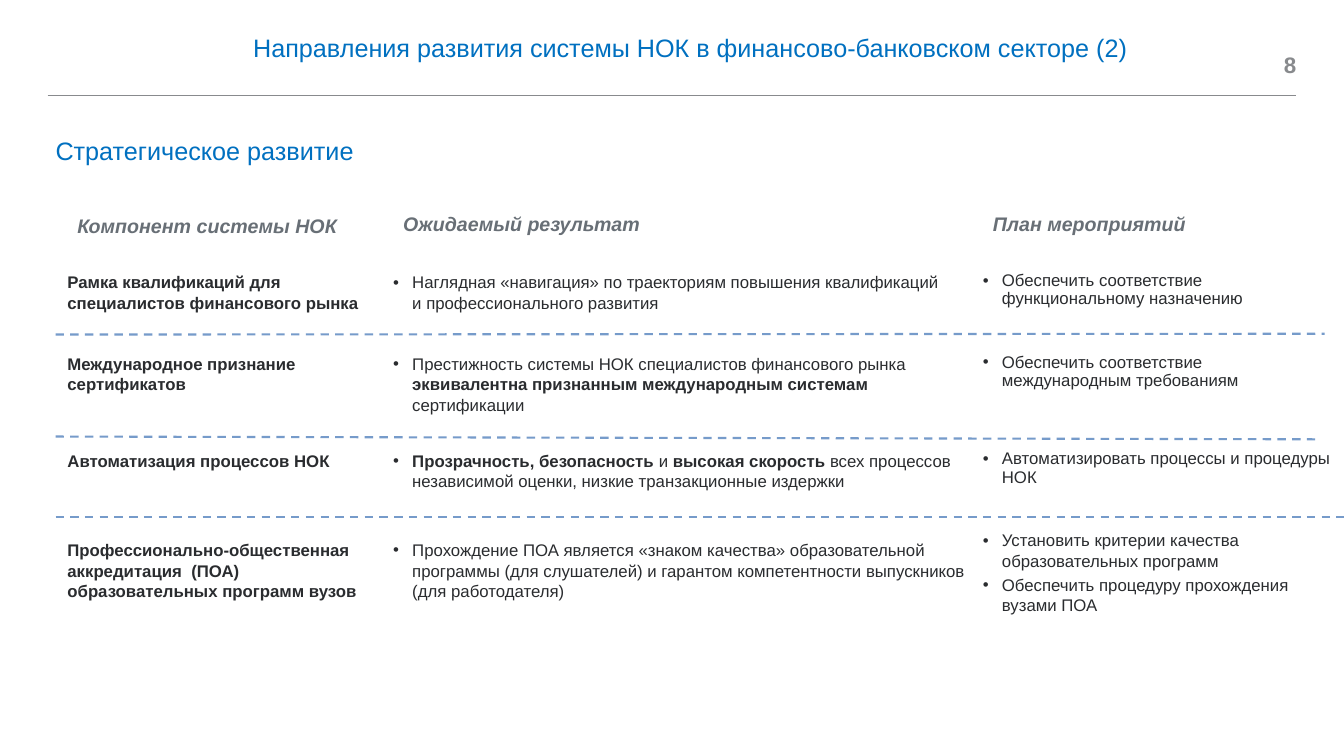
from lxml import etree
from pptx import Presentation
from pptx.dml.color import RGBColor
from pptx.enum.dml import MSO_LINE
from pptx.enum.shapes import MSO_CONNECTOR
from pptx.enum.text import MSO_ANCHOR, MSO_AUTO_SIZE, PP_ALIGN
from pptx.oxml.ns import qn
from pptx.util import Cm, Pt

STRAIGHT = MSO_CONNECTOR.STRAIGHT
DASH = MSO_LINE.DASH
TOP, MIDDLE = MSO_ANCHOR.TOP, MSO_ANCHOR.MIDDLE
FIXED = MSO_AUTO_SIZE.NONE
LEFT, RIGHT = PP_ALIGN.LEFT, PP_ALIGN.RIGHT

COLORS = {"blue": "0070C0", "dark": "2A2C2F", "head": "686F76",
          "gray": "888A8D", "dash": "769BCA"}

TITLE = "Направления развития системы НОК в финансово-банковском секторе (2)"
SUBTITLE = "Стратегическое развитие"
PAGE = "8"

# Heading, left, top, width
HEADS = [
    ("Компонент системы НОК", 1.7, 5.26, 10.59),
    ("Ожидаемый результат", 9.91, 5.21, 10.59),
    ("План мероприятий", 24.77, 5.21, 5.61),
]
# Top, component, result, width of result, plan; *...* marks bold
ROWS = [
    (6.86, "Рамка квалификаций для специалистов финансового рынка",
     "Наглядная «навигация» по траекториям повышения квалификаций "
     "и профессионального развития", 14.05,
     ["Обеспечить соответствие функциональному назначению"]),
    (8.92, "Международное признание сертификатов",
     "Престижность системы НОК специалистов финансового рынка "
     "*эквивалентна признанным международным системам *сертификации", 14.53,
     ["Обеспечить соответствие международным требованиям"]),
    (11.35, "Автоматизация процессов НОК",
     "*Прозрачность, безопасность* и *высокая скорость *всех процессов "
     "независимой оценки, низкие транзакционные издержки", 14.53,
     ["Автоматизировать процессы и процедуры НОК"]),
    (13.61, "Профессионально-общественная аккредитация  (ПОА) "
     "образовательных программ вузов",
     "Прохождение ПОА является «знаком качества» образовательной программы "
     "(для слушателей) и гарантом компетентности выпускников "
     "(для работодателя)", 14.53,
     ["Установить критерии качества образовательных программ",
      "Обеспечить процедуру прохождения вузами ПОА"]),
]
# Left, top, right, bottom, colour, weight, dashed
RULES = [
    (1.2, 2.41, 32.66, 2.41, "gray", 0.5, False),
    (1.4, 8.43, 33.38, 8.41, "dash", 1.5, True),
    (1.4, 11.0, 33.2, 11.07, "dash", 1.5, True),
    (1.4, 13.03, 33.86, 13.03, "dash", 1.5, True),
]
COLS = [left for _, left, _, _ in HEADS]
NAME_W, PLAN_W, ROW_H = 7.92, 8.79, 1.63

deck = Presentation()
deck.slide_width, deck.slide_height = Cm(33.87), Cm(19.05)
slide = deck.slides.add_slide(deck.slide_layouts[1])
title, body = slide.placeholders


def bullet(para):
    props = para._p.get_or_add_pPr()
    props.set("marL", str(Cm(0.48)))
    props.set("indent", str(-Cm(0.48)))
    etree.SubElement(props, qn("a:buFont")).set("typeface", "Arial")
    etree.SubElement(props, qn("a:buChar")).set("char", "•")


def write(place, lines, size, color, bold=False, italic=False, shape=None,
          list_=False, space=1.0, align=LEFT, inset=(0, 0), anchor=TOP):
    """Fill the given placeholder, or a new text box, at place."""
    spot = [Cm(part) for part in place]
    if shape is None:
        shape = slide.shapes.add_textbox(*spot)
    else:
        shape.left, shape.top, shape.width, shape.height = spot
    frame = shape.text_frame
    frame.word_wrap, frame.auto_size = True, FIXED
    frame.vertical_anchor = anchor
    frame.margin_left = frame.margin_right = Cm(inset[0])
    frame.margin_top = frame.margin_bottom = Cm(inset[1])
    for i, line in enumerate(lines):
        para = frame.add_paragraph() if i else frame.paragraphs[0]
        para.alignment, para.line_spacing = align, space
        para.space_before = Pt(3 if i else 0)
        if list_:
            bullet(para)
        for j, part in enumerate(line.split("*")):
            if not part:
                continue
            run = para.add_run()
            run.text = part
            font = run.font
            font.name, font.size = "Arial", Pt(size)
            font.bold, font.italic = bold or j % 2 == 1, italic
            font.color.rgb = RGBColor.from_string(COLORS[color])


def rule(left, top, right, bottom, color, weight, dashed):
    line = slide.shapes.add_connector(
        STRAIGHT, Cm(left), Cm(top), Cm(right), Cm(bottom))
    line.line.color.rgb = RGBColor.from_string(COLORS[color])
    line.line.width = Pt(weight)
    if dashed:
        line.line.dash_style = DASH
    etree.SubElement(line._element.spPr, qn("a:effectLst"))


write((6.38, 0.91, 22.76, 1.32), [TITLE], 18, "blue", shape=title, space=0.9)
write((30.61, 1.19, 2.06, 0.89), [PAGE], 16, "gray", bold=True,
      align=RIGHT, anchor=MIDDLE)
write((1.4, 3.4, 7.92, 1.55), [SUBTITLE], 18, "blue")

for head, left, top, width in HEADS:
    write((left, top, width, 0.86), [head], 14, "head", bold=True,
          italic=True, inset=(0.25, 0.13))

for top, name, result, width, plan in ROWS:
    several = len(plan) > 1
    write((COLS[0], top, NAME_W, ROW_H), [name], 12, "dark", bold=True)
    write((COLS[1], top, width, ROW_H), [result], 12, "dark", list_=True)
    write((COLS[2], top - 0.25 * several, PLAN_W, ROW_H + 0.53 * several),
          plan, 12, "dark", list_=True, space=1.0 if several else 0.9,
          shape=body if several else None)

for line in RULES:
    rule(*line)

deck.save("out.pptx")
